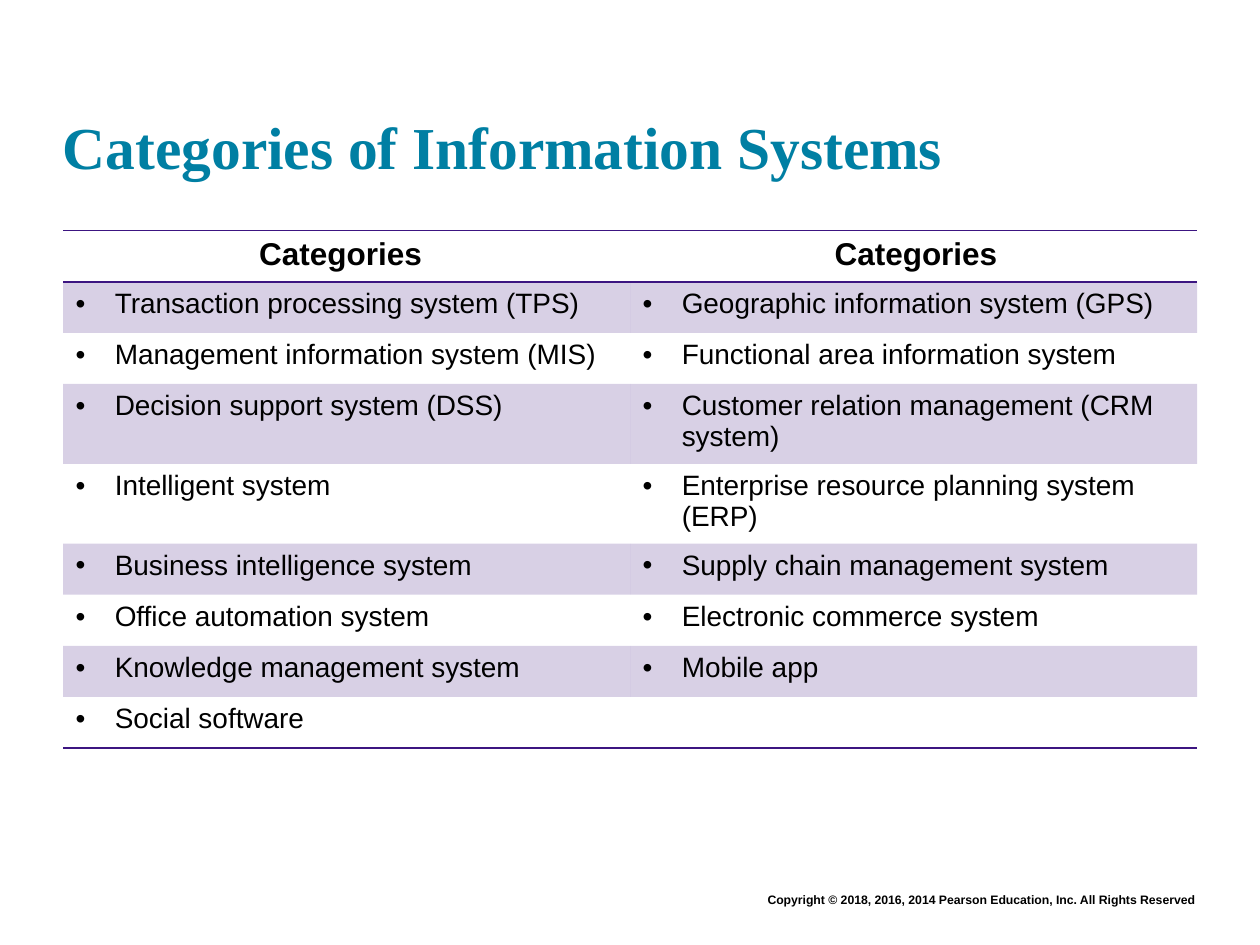
from lxml import etree
from pptx import Presentation
from pptx.dml.color import RGBColor
from pptx.enum.text import MSO_ANCHOR, PP_ALIGN
from pptx.oxml.ns import qn
from pptx.util import Cm, Pt

LEFT, RIGHT = PP_ALIGN.LEFT, PP_ALIGN.RIGHT
TOP, BOTTOM = MSO_ANCHOR.TOP, MSO_ANCHOR.BOTTOM
PLAIN_STYLE = "{2D5ABB26-0587-4C30-8999-92F81FD0307C}"

COLORS = {"title": "007FA3", "text": "000000", "accent": "3C1581"}
BODY_FONT, TITLE_FONT = "Arial", "Times New Roman"

HEADING = "Categories"
HEADING_INDENTS = (3.7, 3.87)
SYSTEMS = [
    ("Transaction processing system (TPS)", "Geographic information system (GPS)"),
    ("Management information system (MIS)", "Functional area information system"),
    ("Decision support system (DSS)", "Customer relation management (CRM system)"),
    ("Intelligent system", "Enterprise resource planning system (ERP)"),
    ("Business intelligence system", "Supply chain management system"),
    ("Office automation system", "Electronic commerce system"),
    ("Knowledge management system", "Mobile app"),
    ("Social software", ""),
]


class SlideBuilder:
    def __init__(self, slide):
        self.slide = slide

    def run(self, paragraph, text, size, color="text", font=BODY_FONT, bold=False):
        run = paragraph.add_run()
        run.text = text
        run.font.name = font
        run.font.size = Pt(size)
        run.font.bold = bold
        run.font.color.rgb = RGBColor.from_string(COLORS[color])

    def text(self, box, text, size, color="text", font=BODY_FONT,
             align=LEFT, anchor=TOP, inset=None):
        frame = self.slide.shapes.add_textbox(*map(Cm, box)).text_frame
        frame.word_wrap = True
        frame.vertical_anchor = anchor
        if inset is not None:
            frame.margin_left = frame.margin_right = Cm(inset)
            frame.margin_top = frame.margin_bottom = Cm(inset)
        paragraph = frame.paragraphs[0]
        paragraph.alignment = align
        self.run(paragraph, text, size, color, font, bold=True)

    def indent(self, paragraph, left, first=0.0):
        properties = paragraph._p.get_or_add_pPr()
        properties.set("marL", str(Cm(left)))
        properties.set("indent", str(Cm(first)))
        return properties

    def bullet(self, paragraph, text):
        properties = self.indent(paragraph, 0.79, -0.79)
        etree.SubElement(properties, qn("a:buFont")).set("typeface", BODY_FONT)
        etree.SubElement(properties, qn("a:buChar")).set("char", "•")
        self.run(paragraph, text, 16)

    def rule(self, cell, edge):
        line = etree.SubElement(cell._tc.get_or_add_tcPr(), qn(f"a:{edge}"))
        line.set("w", str(Pt(1)))
        fill = etree.SubElement(line, qn("a:solidFill"))
        etree.SubElement(fill, qn("a:srgbClr")).set("val", COLORS["accent"])

    def tint(self, cell):
        cell.fill.solid()
        cell.fill.fore_color.rgb = RGBColor.from_string(COLORS["accent"])
        color = cell._tc.tcPr.find(".//" + qn("a:solidFill") + "/" + qn("a:srgbClr"))
        etree.SubElement(color, qn("a:alpha")).set("val", "20000")

    def table(self, left, top, width, row_height):
        count = len(SYSTEMS) + 1
        frame = self.slide.shapes.add_table(
            count, 2, Cm(left), Cm(top), Cm(width), Cm(row_height * count))
        table = frame.table
        table.horz_banding = False
        table._tbl.tblPr.find(qn("a:tableStyleId")).text = PLAIN_STYLE
        for row in table.rows:
            row.height = Cm(row_height)

        # Heading row, ruled above and below
        for cell, offset in zip(table.rows[0].cells, HEADING_INDENTS):
            paragraph = cell.text_frame.paragraphs[0]
            self.indent(paragraph, offset)
            self.run(paragraph, HEADING, 18, bold=True)
            self.rule(cell, "lnT")
            self.rule(cell, "lnB")
            cell.fill.background()

        # Bulleted rows, every other one tinted
        for number, systems in enumerate(SYSTEMS, 1):
            for column, system in enumerate(systems):
                cell = table.cell(number, column)
                if system:
                    self.bullet(cell.text_frame.paragraphs[0], system)
                if number == len(SYSTEMS):
                    self.rule(cell, "lnB")
                if number % 2:
                    self.tint(cell)
                else:
                    cell.fill.background()


def main():
    deck = Presentation()
    deck.slide_width, deck.slide_height = Cm(25.4), Cm(19.05)
    builder = SlideBuilder(deck.slides.add_slide(deck.slide_layouts[6]))

    # Title
    builder.text((1.27, 0.61, 22.86, 3.05), "Categories of Information Systems", 34,
                 "title", TITLE_FONT, anchor=BOTTOM, inset=0)

    # Table of system categories
    builder.table(1.27, 4.65, 22.86, 1.03)

    # Copyright line
    builder.text((4.45, 17.86, 19.89, 0.56),
                 "Copyright © 2018, 2016, 2014 Pearson Education, Inc. All Rights Reserved",
                 7, align=RIGHT)

    deck.save("out.pptx")


if __name__ == "__main__":
    main()
